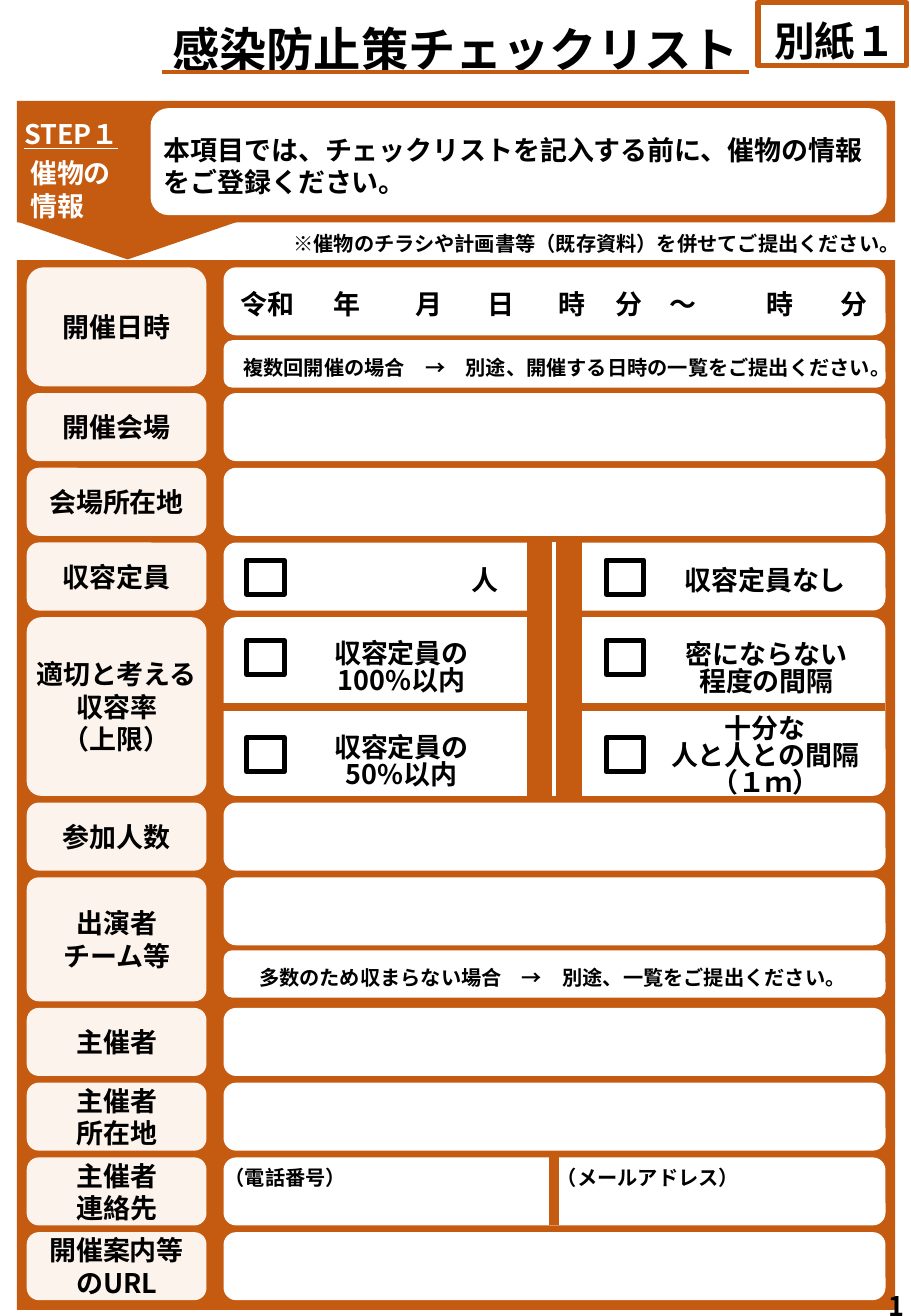
"""Build the event checklist form as a one-page portrait slide."""
from lxml.etree import SubElement
from pptx import Presentation
from pptx.dml.color import RGBColor
from pptx.enum.shapes import MSO_CONNECTOR, MSO_SHAPE
from pptx.enum.text import MSO_ANCHOR, MSO_AUTO_SIZE, PP_ALIGN
from pptx.oxml.ns import qn
from pptx.util import Emu, Pt

PX = 9144
FONT = "Noto Sans CJK JP"
RUST, CREAM, WHITE, BLACK = "C55A11", "FDF3ED", "FFFFFF", "000000"
LEFT, MID, RIGHT = PP_ALIGN.LEFT, PP_ALIGN.CENTER, PP_ALIGN.RIGHT

TITLE = "感染防止策チェックリスト"
STEP = "STEP１\n 催物の\n 情報"
GUIDE = "本項目では、チェックリストを記入する前に、催物の情報をご登録ください。"

# label, height, corner, side inset, field heights
ROWS = [
    ("開催日時", 98, 14, 7, (56, 39)),
    ("開催会場", 56, 10, 7, (56,)),
    ("会場所在地", 56, 10, 7, (56,)),
    ("収容定員", 56, 10, 0, (56,)),
    ("適切と考える\n収容率\n（上限）", 147, 12, 0, (147,)),
    ("参加人数", 56, 10, 7, (56,)),
    ("出演者\nチーム等", 102, 10, 7, (56, 39)),
    ("主催者", 56, 10, 7, (56,)),
    ("主催者\n所在地", 56, 10, 7, (56,)),
    ("主催者\n連絡先", 56, 10, 7, (56,)),
    ("開催案内等のURL", 56, 10, 7, (56,)),
]
DATES = [("令和", 176, 89), ("年", 241, 89), ("月", 309, 89), ("日", 368, 89),
         ("時", 426, 89), ("分　～　", 485, 132), ("時", 598, 89), ("分", 637, 132)]
CHOICES = [
    ("人", (355, 463, 89, 29)),
    ("収容定員なし", (549, 463, 162, 29)),
    ("収容定員の\n100%以内", (224, 523, 213, 50)),
    ("密にならない程度の間隔", (550, 524, 162, 50)),
    ("収容定員の\n50%以内", (224, 601, 213, 50)),
    ("十分な\n人と人との間隔\n（１ｍ）", (530, 585, 200, 68)),
]
NOTES = [
    ("複数回開催の場合　→　別途、開催する日時の一覧をご提出ください。", (189, 285, 539, 30), MID),
    ("多数のため収まらない場合　→　別途、一覧をご提出ください。", (198, 787, 514, 30), MID),
    ("（電話番号）", (168, 952, 134, 30), MID),
    ("（メールアドレス）", (448, 952, 171, 30), MID),
    ("※催物のチラシや計画書等（既存資料）を併せてご提出ください。", (212, 183, 539, 33), RIGHT),
]
TOP, GAP = 220, 5.5
CHECKS = [(x, y) for y in (461, 527, 607) for x in (203, 499)]

deck = Presentation()
deck.slide_width, deck.slide_height = Emu(750 * PX), Emu(1083 * PX)
page = deck.slides.add_slide(deck.slide_layouts[5])


def scale(*nums):
    """Turn px into EMU."""
    return [Emu(round(n * PX)) for n in nums]


def tint(code):
    """Turn a hex string into a colour."""
    return RGBColor.from_string(code)


def write(frame, text, size=16, color=BLACK, align=MID, lead=None,
          side=10, edge=5, anchor=MSO_ANCHOR.TOP):
    """Fill a text frame, one paragraph a line."""
    frame.word_wrap, frame.auto_size = True, MSO_AUTO_SIZE.NONE
    frame.vertical_anchor = anchor
    frame.margin_left, frame.margin_right = scale(side, side)
    frame.margin_top, frame.margin_bottom = scale(edge, edge)
    for i, line in enumerate(text.split("\n")):
        para = frame.add_paragraph() if i else frame.paragraphs[0]
        para.alignment = align
        if lead:
            para.line_spacing = Pt(lead)
        run = para.add_run()
        run.text = line
        font = run.font
        font.size, font.bold, font.name = Pt(size), True, FONT
        font.color.rgb = tint(color)
        SubElement(run._r.get_or_add_rPr(), qn("a:ea"), typeface=FONT)
    return frame


def label(text, box, **style):
    """Add a text box."""
    return write(page.shapes.add_textbox(*scale(*box)).text_frame, text, **style)


def block(box, fill=None, line=None, kind=MSO_SHAPE.RECTANGLE, bend=None):
    """Add a flat shape."""
    shape = page.shapes.add_shape(kind, *scale(*box))
    shape.shadow.inherit = False
    if fill:
        shape.fill.solid()
        shape.fill.fore_color.rgb = tint(fill)
    else:
        shape.fill.background()
    if line:
        shape.line.color.rgb, shape.line.width = tint(line), Pt(3)
    else:
        shape.line.fill.background()
    if bend:
        shape.adjustments[0] = bend
    return shape


def rule(ends, color, width):
    """Add a straight line."""
    link = page.shapes.add_connector(MSO_CONNECTOR.STRAIGHT, *scale(*ends))
    link.line.color.rgb, link.line.width = tint(color), Pt(width)
    SubElement(link._element.spPr, qn("a:effectLst"))


def head():
    """Draw the title, the tag and the step banner."""
    title = page.shapes.title
    title.left, title.top, title.width, title.height = scale(48, 12, 654, 57)
    write(title.text_frame, TITLE, size=28)
    rule((133, 59, 617, 59), RUST, 2.25)
    label("別紙１", (606, 8, 163, 50), size=24)
    block((624, 2, 122, 52), line=RUST)
    block((74, 92, 62, 181), RUST, kind=MSO_SHAPE.PENTAGON).rotation = 90
    block((14, 83, 723, 100), RUST)
    block((124, 89, 606, 88), WHITE, kind=MSO_SHAPE.ROUNDED_RECTANGLE)
    step = label(STEP, (10, 92, 119, 96), color=WHITE, align=LEFT).paragraphs[0]
    step.runs[0].font.underline, step.space_after = True, Pt(4)
    label(GUIDE, (125, 105, 614, 64), align=LEFT)


def form():
    """Draw the label and field grid."""
    block((14, 214, 723, 864), RUST)
    top = TOP
    for text, high, curve, side, fields in ROWS:
        cell = block((22, top, 148, high), CREAM,
                     kind=MSO_SHAPE.ROUNDED_RECTANGLE, bend=curve / high)
        write(cell.text_frame, text, side=side, edge=4, anchor=MSO_ANCHOR.MIDDLE)
        down = top
        for tall in fields:
            block((184, down, 545, tall), WHITE, kind=MSO_SHAPE.ROUNDED_RECTANGLE,
                  bend=min(0.186, 10.4 / tall))
            down += tall + 4
        top += high + GAP


def marks():
    """Draw the rules, boxes and words on the fields."""
    rule((729, 582, 184, 582), RUST, 4.5)
    rule((456, 952, 456, 1008), RUST, 6)
    block((434, 446, 45, 209), RUST)
    rule((456, 446, 456, 655), WHITE, 2.25)
    for x, y in CHECKS:
        block((x, y, 31, 28), line=BLACK)
    for text, x, wide in DATES:
        label(text, (x, 236, wide, 30), lead=16)
    for text, box in CHOICES:
        label(text, box, lead=16)
    for text, box, align in NOTES:
        label(text, box, size=12, align=align, lead=16)
    label("1", (722, 1056, 59, 37), align=LEFT)


if __name__ == "__main__":
    head()
    form()
    marks()
    deck.save("out.pptx")
